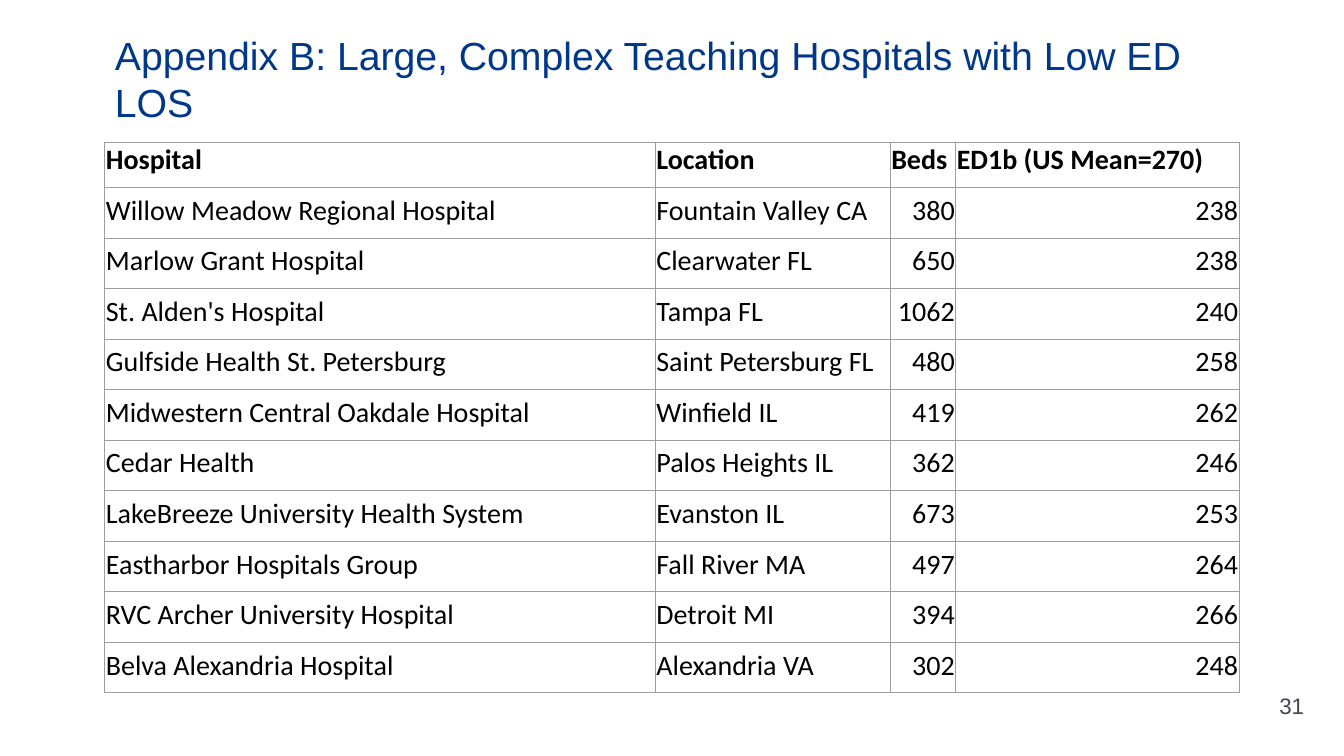
from dataclasses import dataclass

from lxml import etree
from pptx import Presentation
from pptx.dml.color import RGBColor
from pptx.enum.text import MSO_ANCHOR, MSO_AUTO_SIZE, PP_ALIGN
from pptx.oxml.ns import qn
from pptx.util import Inches, Pt

LEFT, RIGHT = PP_ALIGN.LEFT, PP_ALIGN.RIGHT
TOP, MIDDLE, BOTTOM = MSO_ANCHOR.TOP, MSO_ANCHOR.MIDDLE, MSO_ANCHOR.BOTTOM
NO_AUTOFIT = MSO_AUTO_SIZE.NONE


@dataclass(frozen=True)
class Theme:
    heading_font: str = "Arial"
    table_font: str = "Calibri"
    heading: str = "003889"
    number: str = "464653"
    text: str = "000000"
    border: str = "9E9E9E"
    heading_size: int = 28
    number_size: int = 16
    table_size: int = 20
    border_width: float = 0.75


THEME = Theme()

HEADERS = ("Hospital", "Location", "Beds", "ED1b (US Mean=270)")
HOSPITALS = (
    ("Willow Meadow Regional Hospital", "Fountain Valley CA", 380, 238),
    ("Marlow Grant Hospital", "Clearwater FL", 650, 238),
    ("St. Alden's Hospital", "Tampa FL", 1062, 240),
    ("Gulfside Health St. Petersburg", "Saint Petersburg FL", 480, 258),
    ("Midwestern Central Oakdale Hospital", "Winfield IL", 419, 262),
    ("Cedar Health", "Palos Heights IL", 362, 246),
    ("LakeBreeze University Health System", "Evanston IL", 673, 253),
    ("Eastharbor Hospitals Group", "Fall River MA", 497, 264),
    ("RVC Archer University Hospital", "Detroit MI", 394, 266),
    ("Belva Alexandria Hospital", "Alexandria VA", 302, 248),
)
COLUMN_WIDTHS = (5.46, 2.33, 0.65, 2.81)
HEADER_HEIGHT, ROW_HEIGHT = 0.45, 0.5


def add_text(paragraph, text, font, size, color, bold=False):
    run = paragraph.add_run()
    run.text = text
    run.font.name = font
    run.font.size = Pt(size)
    run.font.bold = bold
    run.font.color.rgb = RGBColor.from_string(color)


def add_borders(cell):
    properties = cell._tc.get_or_add_tcPr()
    for position, side in enumerate(("a:lnL", "a:lnR", "a:lnT", "a:lnB")):
        line = etree.Element(qn(side), w=str(Pt(THEME.border_width)))
        fill = etree.SubElement(line, qn("a:solidFill"))
        etree.SubElement(fill, qn("a:srgbClr"), val=THEME.border)
        properties.insert(position, line)


prs = Presentation()
prs.slide_width, prs.slide_height = Inches(13.33), Inches(7.5)
slide = prs.slides.add_slide(prs.slide_layouts[5])

# Title
title = slide.shapes.title
title.left, title.top = Inches(1.04), Inches(0.26)
title.width, title.height = Inches(11.5), Inches(0.96)
title.text_frame.vertical_anchor = TOP
title.text_frame.auto_size = NO_AUTOFIT
heading = title.text_frame.paragraphs[0]
heading.alignment = LEFT
add_text(heading, "Appendix B: Large, Complex Teaching Hospitals with Low ED LOS",
         THEME.heading_font, THEME.heading_size, THEME.heading)

# Hospital table
table_height = HEADER_HEIGHT + ROW_HEIGHT * len(HOSPITALS)
hospital_table = slide.shapes.add_table(
    len(HOSPITALS) + 1, len(HEADERS), Inches(1.04), Inches(1.41),
    Inches(sum(COLUMN_WIDTHS)), Inches(table_height)).table
hospital_table.first_row = False
hospital_table.horz_banding = False
for column, width in zip(hospital_table.columns, COLUMN_WIDTHS):
    column.width = Inches(width)

for row_index, record in enumerate((HEADERS, *HOSPITALS)):
    is_header = row_index == 0
    hospital_table.rows[row_index].height = Inches(HEADER_HEIGHT if is_header else ROW_HEIGHT)
    for column_index, value in enumerate(record):
        cell = hospital_table.cell(row_index, column_index)
        cell.fill.background()
        add_borders(cell)
        cell.vertical_anchor = BOTTOM
        cell.margin_left = cell.margin_top = cell.margin_right = Inches(0.01)
        cell.margin_bottom = Inches(0.1)
        entry = cell.text_frame.paragraphs[0]
        if isinstance(value, int):
            entry.alignment = RIGHT
            entry.line_spacing = 1.15
        add_text(entry, str(value), THEME.table_font, THEME.table_size, THEME.text, is_header)

# Page number
page_number = slide.shapes.add_textbox(Inches(12.59), Inches(6.8), Inches(0.63), Inches(0.4))
page_number.text_frame.word_wrap = True
page_number.text_frame.vertical_anchor = MIDDLE
add_text(page_number.text_frame.paragraphs[0], "31",
         THEME.heading_font, THEME.number_size, THEME.number)

prs.save("out.pptx")
